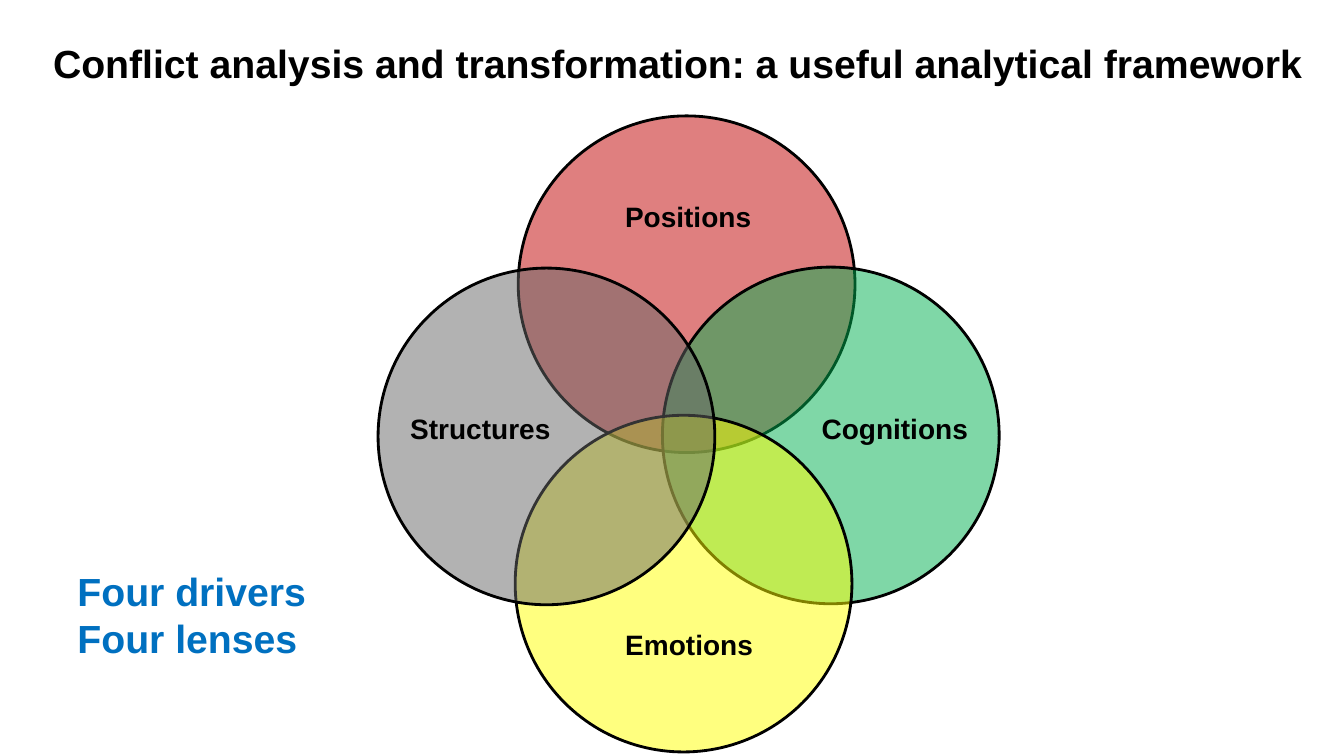
from lxml import etree
from pptx import Presentation
from pptx.dml.color import RGBColor
from pptx.enum.shapes import MSO_SHAPE
from pptx.enum.text import MSO_ANCHOR, PP_ALIGN
from pptx.oxml.ns import qn
from pptx.util import Pt

OVAL = MSO_SHAPE.OVAL
MIDDLE, TOP = MSO_ANCHOR.MIDDLE, MSO_ANCHOR.TOP
LEFT, CENTER = PP_ALIGN.LEFT, PP_ALIGN.CENTER

BLACK = RGBColor(0x00, 0x00, 0x00)
BLUE = RGBColor(0x00, 0x70, 0xC0)
RED = RGBColor(0xC0, 0x00, 0x00)
GREEN = RGBColor(0x00, 0xB0, 0x50)
YELLOW = RGBColor(0xFF, 0xFF, 0x00)
GRAY = RGBColor(0x66, 0x66, 0x66)

EMU_PER_PX = 9144
SLIDE_SIZE = (1333, 750)
DIAMETER = 334
OPACITY = 50

CIRCLES = [
    (514, 115, RED),
    (657, 265, GREEN),
    (511, 412, YELLOW),
    (375, 266, GRAY),
]
TEXTS = [
    ("Conflict analysis and transformation: a useful analytical framework",
     (0, 0, 1344, 125), 28, BLACK, CENTER, MIDDLE),
    ("Structures", (397, 403, 200, 44), 20, BLACK, LEFT, TOP),
    ("Cognitions", (805, 403, 184, 44), 20, BLACK, LEFT, TOP),
    ("Positions", (542, 193, 281, 44), 20, BLACK, CENTER, TOP),
    ("Emotions", (597, 618, 173, 44), 20, BLACK, CENTER, TOP),
    ("Four drivers\nFour lenses", (67, 558, 330, 104), 28, BLUE, LEFT, TOP),
]


def emu(*lengths):
    return [length * EMU_PER_PX for length in lengths]


def add_circle(slide, left, top, color):
    shape = slide.shapes.add_shape(OVAL, *emu(left, top, DIAMETER, DIAMETER))
    shape.shadow.inherit = False
    shape.fill.solid()
    shape.fill.fore_color.rgb = color
    color_element = shape.fill._xPr.find(qn("a:solidFill"))[0]
    etree.SubElement(color_element, qn("a:alpha"), val=str(OPACITY * 1000))
    shape.line.color.rgb = BLACK
    shape.line.width = Pt(2)


def add_text(slide, text, box, size, color, alignment, anchor):
    text_frame = slide.shapes.add_textbox(*emu(*box)).text_frame
    text_frame.word_wrap = True
    text_frame.vertical_anchor = anchor
    text_frame.text = text
    for paragraph in text_frame.paragraphs:
        paragraph.alignment = alignment
        for run in paragraph.runs:
            run.font.name = "Arial"
            run.font.size = Pt(size)
            run.font.bold = True
            run.font.color.rgb = color


def main():
    presentation = Presentation()
    presentation.slide_width, presentation.slide_height = emu(*SLIDE_SIZE)
    slide = presentation.slides.add_slide(presentation.slide_layouts[6])
    for circle in CIRCLES:
        add_circle(slide, *circle)
    for text in TEXTS:
        add_text(slide, *text)
    presentation.save("out.pptx")


if __name__ == "__main__":
    main()
